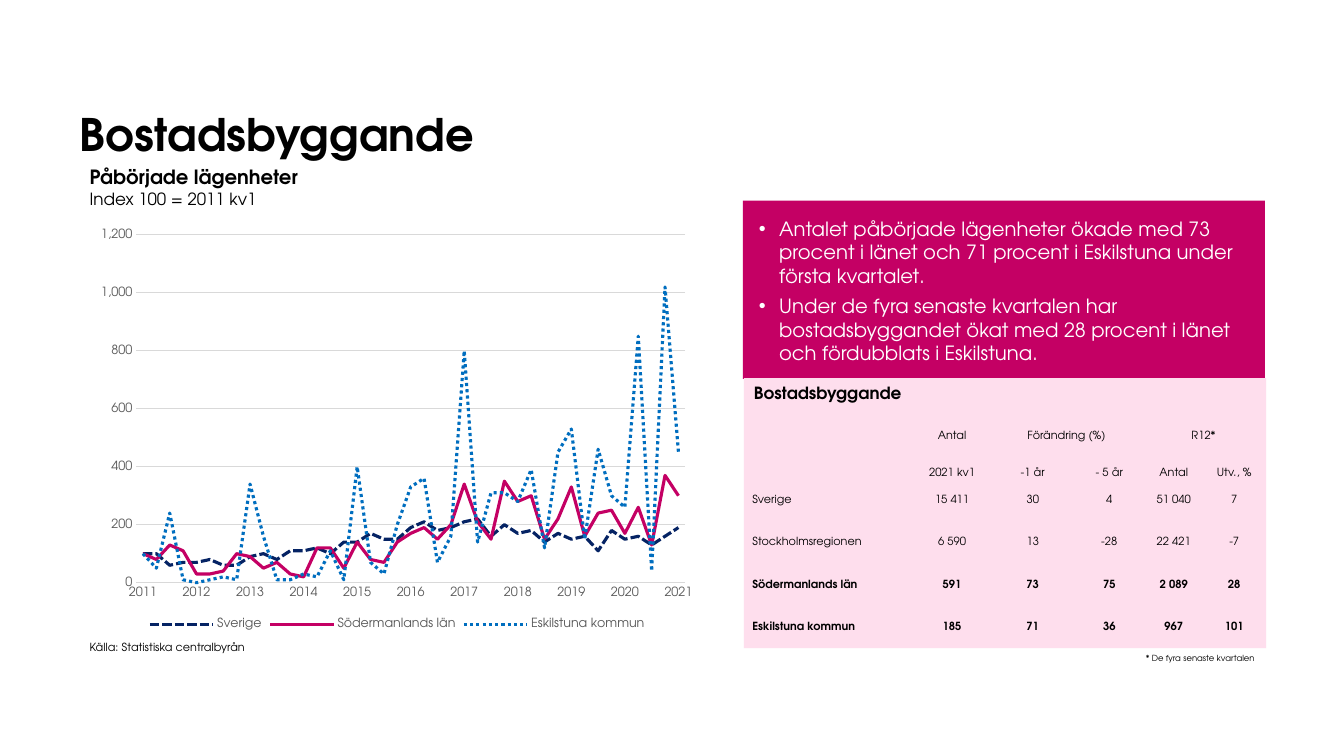
from lxml.etree import SubElement
from pptx import Presentation
from pptx.chart.data import CategoryChartData
from pptx.dml.color import RGBColor
from pptx.enum.chart import XL_CHART_TYPE, XL_LEGEND_POSITION, XL_TICK_MARK
from pptx.enum.dml import MSO_LINE
from pptx.enum.shapes import MSO_SHAPE
from pptx.enum.text import MSO_ANCHOR, MSO_AUTO_SIZE, PP_ALIGN
from pptx.oxml.ns import qn
from pptx.util import Pt

FONT = "TeX Gyre Adventor"
BLACK = RGBColor(0x00, 0x00, 0x00)
WHITE = RGBColor(0xFF, 0xFF, 0xFF)
GREY = RGBColor(0x59, 0x59, 0x59)
GRID = RGBColor(0xD9, 0xD9, 0xD9)
NAVY = RGBColor(0x05, 0x23, 0x64)
MAGENTA = RGBColor(0xC4, 0x00, 0x64)
BLUE = RGBColor(0x00, 0x6E, 0xBF)
PINK = RGBColor(0xFE, 0xDE, 0xED)

TITLE = "Bostadsbyggande"
FINDINGS = [
    "Antalet påbörjade lägenheter ökade med 73 procent i länet och 71 procent i Eskilstuna under första kvartalet.",
    "Under de fyra senaste kvartalen har bostadsbyggandet ökat med 28 procent i länet och fördubblats i Eskilstuna.",
]
CAPTIONS = [
    ((56.9, 453.6, 130.3, 17.3), False, [("Källa: Statistiska centralbyrån", 8, False)]),
    ((531.4, 270, 121.7, 21.6), False, [("Bostadsbyggande", 12, True)]),
    ((811.4, 463, 92.9, 14.4), False, [("* De fyra senaste kvartalen", 6, False)]),
    ((56.9, 114.5, 329.8, 38.9), True,
     [("Påbörjade lägenheter", 14, True), ("Index 100 = 2011 kv1", 12, False)]),
]
HEADER_ROWS = 2
FIRST_BOLD_ROW = 4
ROWS = [
    ["", "Antal", "Förändring (%)", "", "R12*", ""],
    ["", "2021 kv1", "-1 år", "- 5 år", "Antal", "Utv., %"],
    ["Sverige", "15 411", "30", "4", "51 040", "7"],
    ["Stockholmsregionen", "6 590", "13", "-28", "22 421", "-7"],
    ["Södermanlands län", "591", "73", "75", "2 089", "28"],
    ["Eskilstuna kommun", "185", "71", "36", "967", "101"],
]
COLUMN_WIDTHS = [121.7, 54, 61.2, 48.2, 43.9, 42.5]
ROW_HEIGHTS = [25.2, 26.6] + [30.2] * 4
FIRST_YEAR = 2011
SERIES = [
    ("Sverige", NAVY, MSO_LINE.SQUARE_DOT,
     [100, 100, 60, 70, 70, 80, 60, 60, 90, 100, 80, 110, 110, 120, 100, 140, 140, 170, 150, 150, 190,
      210, 180, 190, 210, 220, 160, 200, 170, 180, 140, 170, 150, 160, 110, 180, 150, 160, 130, 160, 190]),
    ("Södermanlands län", MAGENTA, MSO_LINE.SOLID,
     [100, 80, 130, 110, 30, 30, 40, 100, 90, 50, 70, 30, 20, 120, 120, 50, 140, 80, 70, 140, 170,
      190, 150, 200, 340, 210, 150, 350, 280, 300, 150, 220, 330, 160, 240, 250, 170, 260, 130, 370, 300]),
    ("Eskilstuna kommun", BLUE, MSO_LINE.ROUND_DOT,
     [100, 50, 240, 10, 0, 10, 20, 10, 340, 160, 10, 10, 30, 20, 110, 10, 400, 70, 30, 200, 330,
      360, 70, 160, 800, 140, 310, 310, 280, 390, 120, 450, 530, 150, 460, 300, 260, 850, 40, 1020, 450]),
]
PLOT_AREA = {"x": 0.077, "y": 0.034, "w": 0.89, "h": 0.842}


def style(font, size, color=BLACK, bold=False):
    font.name, font.size, font.bold = FONT, Pt(size), bold
    font.color.rgb = color


def write(paragraph, text, size=8, color=BLACK, bold=False, align=PP_ALIGN.LEFT):
    paragraph.alignment = align
    run = paragraph.add_run()
    run.text = text
    style(run.font, size, color, bold)


def place(shape, left, top, width, height):
    shape.left, shape.top, shape.width, shape.height = Pt(left), Pt(top), Pt(width), Pt(height)


def set_margins(holder, left, top, right, bottom):
    holder.margin_left, holder.margin_top = Pt(left), Pt(top)
    holder.margin_right, holder.margin_bottom = Pt(right), Pt(bottom)


def add_title(slide):
    title = slide.shapes.title
    place(title, 56.9, 26.6, 663.8, 87.8)
    frame = title.text_frame
    frame.auto_size = MSO_AUTO_SIZE.NONE
    frame.vertical_anchor = MSO_ANCHOR.BOTTOM
    set_margins(frame, 0, 0, 0, 0)
    write(frame.paragraphs[0], TITLE, size=32, bold=True)


def add_findings(slide):
    body = slide.placeholders[1]
    place(body, 530.6, 143.3, 373, 127.4)
    body.fill.solid()
    body.fill.fore_color.rgb = MAGENTA
    frame = body.text_frame
    frame.auto_size = MSO_AUTO_SIZE.NONE
    set_margins(frame, 11.5, 11.5, 11.5, 11.5)
    for index, finding in enumerate(FINDINGS):
        paragraph = frame.add_paragraph() if index else frame.paragraphs[0]
        paragraph.space_before = Pt(5 if index else 0)
        properties = paragraph._p.get_or_add_pPr()
        properties.set("marL", str(Pt(14.4)))
        properties.set("indent", str(-Pt(14.4)))
        SubElement(properties, qn("a:buChar")).set("char", "•")
        write(paragraph, finding, size=14, color=WHITE)


def add_panel(slide):
    panel = slide.shapes.add_shape(MSO_SHAPE.RECTANGLE, Pt(531.4), Pt(270), Pt(373), Pt(193))
    panel.shadow.inherit = False
    panel.fill.solid()
    panel.fill.fore_color.rgb = PINK
    panel.line.fill.background()


def add_captions(slide):
    for box, wraps, lines in CAPTIONS:
        frame = slide.shapes.add_textbox(*map(Pt, box)).text_frame
        frame.word_wrap = wraps
        paragraph = frame.paragraphs[0]
        for index, (text, size, bold) in enumerate(lines):
            if index:
                paragraph.add_line_break()
            write(paragraph, text, size=size, bold=bold)


def add_figures(slide):
    holder = slide.shapes.add_table(len(ROWS), len(COLUMN_WIDTHS), Pt(531.4), Pt(290.2),
                                    Pt(sum(COLUMN_WIDTHS)), Pt(sum(ROW_HEIGHTS)))
    table = holder.table
    table.first_row = table.horz_banding = False
    table._tbl.tblPr.find(qn("a:tableStyleId")).text = "{2D5ABB26-0587-4C30-8999-92F81FD0307C}"
    for column, width in zip(table.columns, COLUMN_WIDTHS):
        column.width = Pt(width)
    for row, height in zip(table.rows, ROW_HEIGHTS):
        row.height = Pt(height)
    for first in (2, 4):
        table.cell(0, first).merge(table.cell(0, first + 1))
    for r, row in enumerate(ROWS):
        for c, text in enumerate(row):
            cell = table.cell(r, c)
            cell.fill.background()
            cell.vertical_anchor = MSO_ANCHOR.BOTTOM if r < HEADER_ROWS else MSO_ANCHOR.MIDDLE
            set_margins(cell, 0.7 if c else 6, 0.7, 0.7, 0)
            write(cell.text_frame.paragraphs[0], text, bold=r >= FIRST_BOLD_ROW,
                  align=PP_ALIGN.CENTER if c else PP_ALIGN.LEFT)


def add_index_chart(slide):
    data = CategoryChartData(number_format="#,##0")
    quarters = range(len(SERIES[0][3]))
    data.categories = ["" if q % 4 else str(FIRST_YEAR + q // 4) for q in quarters]
    for name, _, _, values in SERIES:
        data.add_series(name, values)
    chart = slide.shapes.add_chart(XL_CHART_TYPE.LINE, Pt(63.4), Pt(157.7), Pt(440.6), Pt(295.2), data).chart
    style(chart.font, 10)
    chart.has_title = False
    chart.has_legend = True
    chart.legend.position = XL_LEGEND_POSITION.BOTTOM
    chart.legend.include_in_layout = False
    style(chart.legend.font, 9, GREY)
    for line, (_, color, dash, _) in zip(chart.plots[0].series, SERIES):
        line.smooth = False
        line.format.line.width = Pt(2.25)
        line.format.line.color.rgb = color
        line.format.line.dash_style = dash
    chart.plots[0].vary_by_categories = False
    years, index = chart.category_axis, chart.value_axis
    for axis in (years, index):
        axis.major_tick_mark = axis.minor_tick_mark = XL_TICK_MARK.NONE
        style(axis.tick_labels.font, 9, GREY)
    index.minimum_scale, index.maximum_scale, index.major_unit = 0, 1200, 200
    index.tick_labels.number_format = "#,##0"
    index.tick_labels.number_format_is_linked = False
    index.format.line.fill.background()
    for line in (years.format.line, index.major_gridlines.format.line):
        line.width = Pt(0.75)
        line.color.rgb = GRID
    skip = years._element.makeelement(qn("c:tickLblSkip"), {"val": "4"})
    years._element.find(qn("c:noMultiLvlLbl")).addprevious(skip)
    plot_area = chart._chartSpace.chart.plotArea
    layout = plot_area.find(qn("c:layout"))
    if layout is None:
        layout = plot_area.makeelement(qn("c:layout"), {})
        plot_area.insert(0, layout)
    manual = SubElement(layout, qn("c:manualLayout"))
    SubElement(manual, qn("c:layoutTarget")).set("val", "inner")
    for side in ("x", "y"):
        SubElement(manual, qn(f"c:{side}Mode")).set("val", "edge")
    for side, share in PLOT_AREA.items():
        SubElement(manual, qn(f"c:{side}")).set("val", str(share))


def main():
    deck = Presentation()
    deck.slide_width, deck.slide_height = Pt(960), Pt(540)
    slide = deck.slides.add_slide(deck.slide_layouts[1])
    for add_part in (add_title, add_panel, add_findings, add_captions, add_figures, add_index_chart):
        add_part(slide)
    deck.save("out.pptx")


if __name__ == "__main__":
    main()
